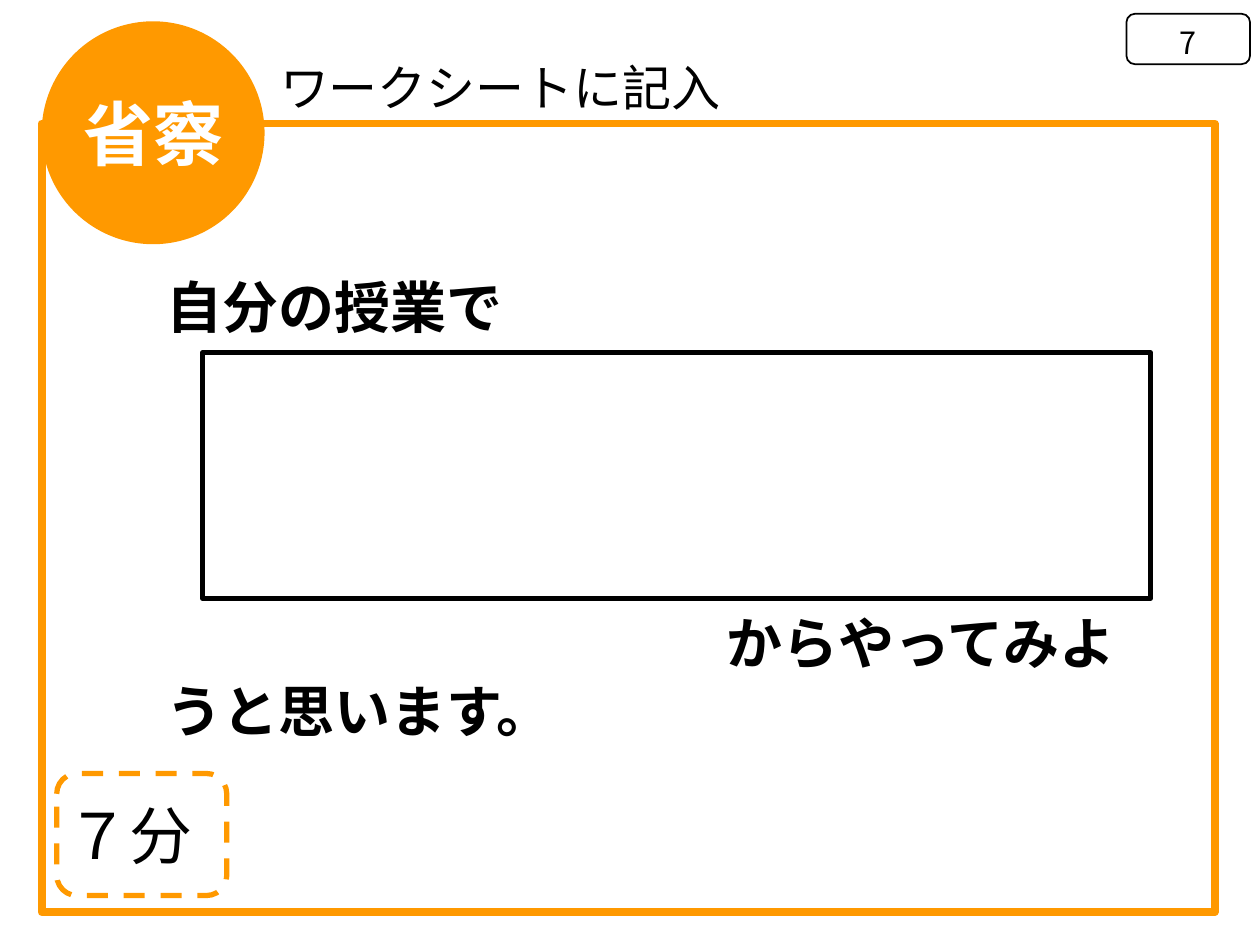
from dataclasses import dataclass

from lxml.etree import SubElement
from pptx import Presentation
from pptx.dml.color import RGBColor
from pptx.enum.dml import MSO_LINE_DASH_STYLE as Dash
from pptx.enum.shapes import MSO_SHAPE as Shape
from pptx.enum.text import MSO_ANCHOR as Anchor, MSO_AUTO_SIZE as AutoSize, PP_ALIGN as Align
from pptx.oxml.ns import qn
from pptx.util import Pt


@dataclass(frozen=True)
class Theme:
    font: str = "Noto Sans CJK JP"
    ink: RGBColor = RGBColor(0, 0, 0)
    accent: RGBColor = RGBColor(0xFF, 0x99, 0)
    paper: RGBColor = RGBColor(0xFF, 0xFF, 0xFF)
    number: float = 17.5
    title: float = 28
    body: float = 32
    timer: float = 36
    badge: float = 40
    body_pitch: float = 38.5


THEME = Theme()


def write_text(para, text, size, color=THEME.ink, bold=False, align=Align.CENTER):
    para.alignment = align
    span = para.add_run()
    span.text = text
    font = span.font
    font.name, font.size, font.bold = THEME.font, Pt(size), bold
    font.color.rgb = color
    SubElement(font._element, qn("a:ea"), typeface=THEME.font)


def set_frame(box, left=7.2, top=3.6, right=7.2, bottom=3.6, anchor=Anchor.MIDDLE, wrap=True):
    frame = box.text_frame
    frame.margin_left, frame.margin_top = Pt(left), Pt(top)
    frame.margin_right, frame.margin_bottom = Pt(right), Pt(bottom)
    frame.vertical_anchor = anchor
    frame.word_wrap = wrap
    frame.auto_size = AutoSize.NONE
    return frame


def place(box, left, top, width, height):
    box.left, box.top, box.width, box.height = map(Pt, (left, top, width, height))


def add_outline(page, kind, area, color, weight, dash=None):
    box = page.shapes.add_shape(kind, *map(Pt, area))
    box.shadow.inherit = False
    box.fill.background()
    box.line.color.rgb = color
    box.line.width = Pt(weight)
    if dash:
        box.line.dash_style = dash
    return box


def add_badge(page, text, area):
    box = page.shapes.add_shape(Shape.OVAL, *map(Pt, area))
    box.shadow.inherit = False
    box.fill.solid()
    box.fill.fore_color.rgb = THEME.accent
    box.line.fill.background()
    frame = set_frame(box, wrap=False)
    write_text(frame.paragraphs[0], text, THEME.badge, THEME.paper, bold=True)


def fill_title(page, text):
    box = page.shapes.title
    place(box, 151.2, 32.4, 269.3, 38.2)
    para = set_frame(box, wrap=False).paragraphs[0]
    para.line_spacing = 0.9
    write_text(para, text, THEME.title)


def fill_body(page, opening, closing):
    box = page.placeholders[1]
    place(box, 87.8, 151.8, 570.2, 239.8)
    frame = set_frame(box, anchor=Anchor.TOP)
    answer_gap = 4 * THEME.body_pitch
    closing_indent = 10 * THEME.body
    lines = ((opening, 0, 0), (closing, answer_gap, closing_indent))
    for index, (text, gap, indent) in enumerate(lines):
        para = frame.add_paragraph() if index else frame.paragraphs[0]
        para.line_spacing = Pt(THEME.body_pitch)
        para.space_before = Pt(gap)
        props = para._p.get_or_add_pPr()
        props.set("marL", "0")
        props.set("indent", str(Pt(indent)))
        SubElement(props, qn("a:buNone"))
        write_text(para, text, THEME.body, bold=True, align=Align.LEFT)


def main():
    deck = Presentation()
    deck.slide_width, deck.slide_height = Pt(720), Pt(540)
    page = deck.slides.add_slide(deck.slide_layouts[1])

    fill_title(page, "ワークシートに記入")
    fill_body(page, "自分の授業で", "からやってみようと思います。")

    number = add_outline(page, Shape.ROUNDED_RECTANGLE, (643.7, 7.9, 70.6, 28.8), THEME.ink, 1)
    write_text(set_frame(number, bottom=0).paragraphs[0], "7", THEME.number)

    timer = add_outline(page, Shape.ROUNDED_RECTANGLE, (32.4, 442, 97.2, 69.8),
                        THEME.accent, 3, Dash.DASH)
    write_text(set_frame(timer, left=2, right=2).paragraphs[0], "７分", THEME.timer, align=Align.LEFT)

    add_outline(page, Shape.RECTANGLE, (23.8, 70.6, 670.3, 450.7), THEME.accent, 4.5)
    add_badge(page, "省察", (23.8, 12.2, 127.4, 127.4))
    add_outline(page, Shape.RECTANGLE, (115.9, 201.6, 541.4, 140.4), THEME.ink, 3)

    deck.save("out.pptx")


if __name__ == "__main__":
    main()
